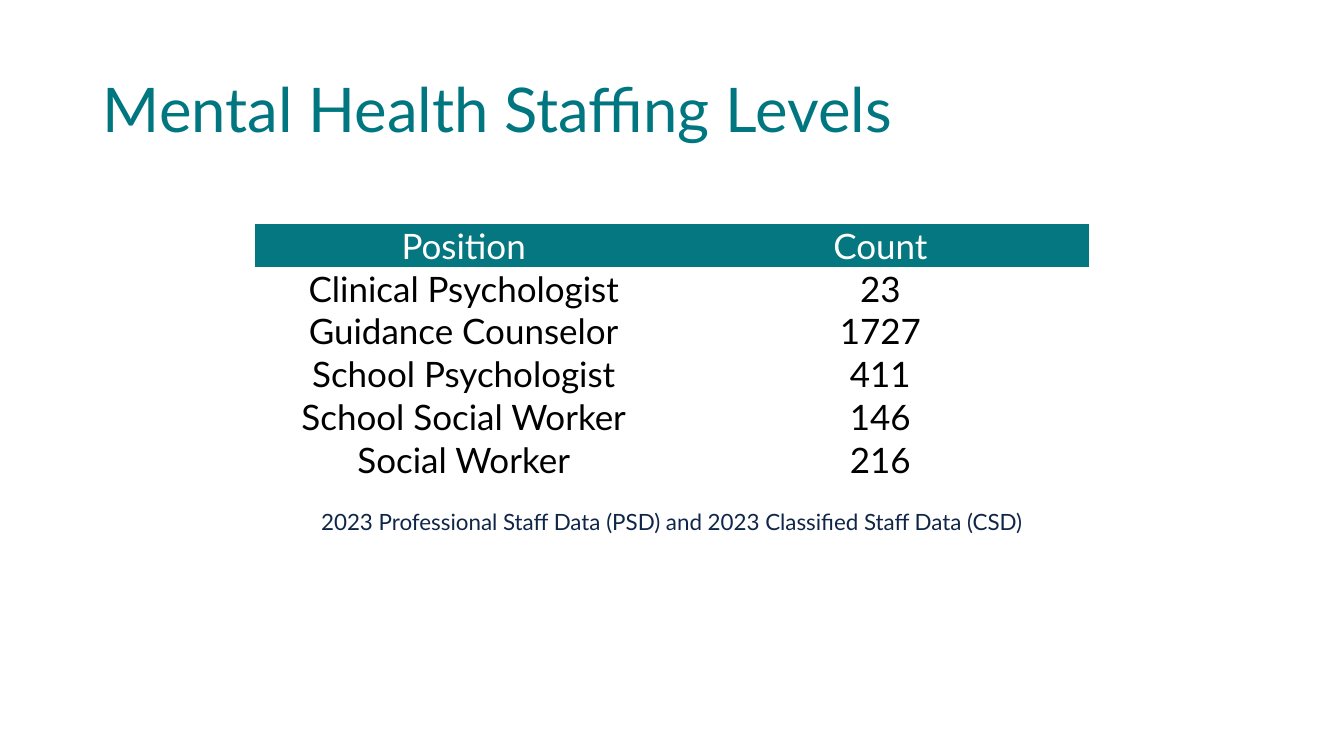
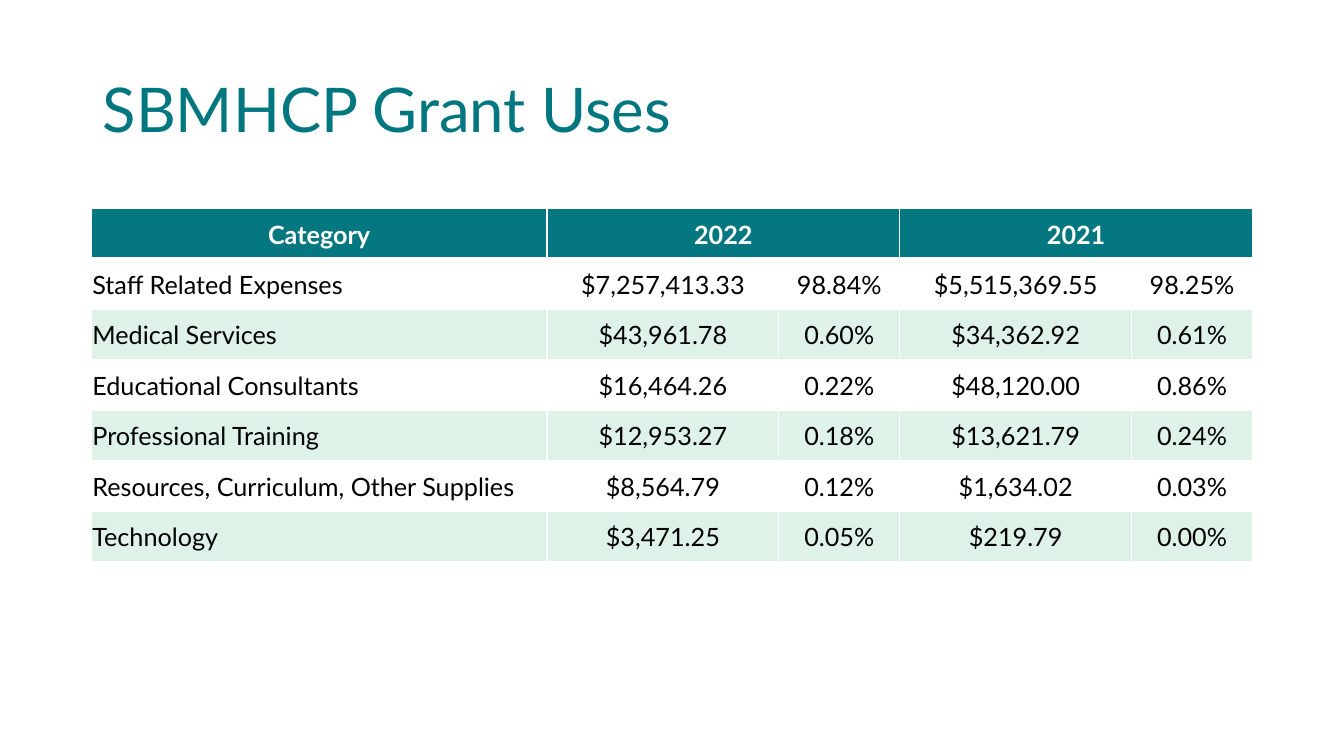
from lxml.etree import SubElement
from pptx import Presentation
from pptx.dml.color import RGBColor
from pptx.enum.text import MSO_ANCHOR as Anchor, PP_ALIGN as Align
from pptx.oxml.ns import qn
from pptx.util import Inches, Pt

SLIDE_WIDTH, SLIDE_HEIGHT = Inches(13.33), Inches(7.5)
FONT = "Lato"
COLORS = {
    "title": "007780",
    "header": "057780",
    "stripe": "DEF2E8",
    "note": "102649",
    "text": "000000",
    "white": "FFFFFF",
}
NO_GRID_STYLE = "{2D5ABB26-0587-4C30-8999-92F81FD0307C}"
TITLE_ONLY, TITLE_AND_BODY = 5, 1

STAFFING = [
    ["Position", "Count"],
    ["Clinical Psychologist", "23"],
    ["Guidance Counselor", "1727"],
    ["School Psychologist", "411"],
    ["School Social Worker", "146"],
    ["Social Worker", "216"],
]
GRANT_USES = [
    ["Category", "2022", "", "2021", ""],
    ["Staff Related Expenses", "$7,257,413.33", "98.84%", "$5,515,369.55", "98.25%"],
    ["Medical Services", "$43,961.78", "0.60%", "$34,362.92", "0.61%"],
    ["Educational Consultants", "$16,464.26", "0.22%", "$48,120.00", "0.86%"],
    ["Professional Training", "$12,953.27", "0.18%", "$13,621.79", "0.24%"],
    ["Resources, Curriculum, Other Supplies", "$8,564.79", "0.12%", "$1,634.02", "0.03%"],
    ["Technology", "$3,471.25", "0.05%", "$219.79", "0.00%"],
]


def centred_area(width, top, height):
    """Turn percentages of the slide into a horizontally centred box."""
    return (
        int(SLIDE_WIDTH * (100 - width) / 200),
        int(SLIDE_HEIGHT * top / 100),
        int(SLIDE_WIDTH * width / 100),
        int(SLIDE_HEIGHT * height / 100),
    )


def write(frame, text, size, color, align, bold=False):
    paragraph = frame.paragraphs[0]
    paragraph.alignment = align
    paragraph.space_before = Pt(0)
    run = paragraph.add_run()
    run.text = text
    run.font.name = FONT
    run.font.size = Pt(size)
    run.font.bold = bold
    run.font.color.rgb = RGBColor.from_string(COLORS[color])
    return paragraph


def place(shape, area):
    shape.left, shape.top, shape.width, shape.height = area


def add_titled_slide(deck, title, layout):
    slide = deck.slides.add_slide(deck.slide_layouts[layout])
    heading = slide.shapes.title
    place(heading, centred_area(86.2, 5.3, 19.3))
    heading.text_frame.vertical_anchor = Anchor.MIDDLE
    write(heading.text_frame, title, 44, "title", Align.LEFT).line_spacing = 0.9
    return slide


def add_source_note(slide, text):
    note = slide.placeholders[1]
    place(note, centred_area(86.2, 67, 7.9))
    properties = note.text_frame.paragraphs[0]._p.get_or_add_pPr()
    properties.set("marL", "0")
    properties.set("indent", "0")
    SubElement(properties, qn("a:buNone"))
    write(note.text_frame, text, 16, "note", Align.CENTER).line_spacing = 0.9


def add_borders(cell, bottom_width):
    properties = cell._tc.get_or_add_tcPr()
    for side, width in (("L", 1), ("R", 1), ("T", 1), ("B", bottom_width)):
        line = SubElement(properties, qn(f"a:ln{side}"), w=str(Pt(width)))
        fill = SubElement(line, qn("a:solidFill"))
        SubElement(fill, qn("a:srgbClr"), val=COLORS["white"])


def fill_cell(cell, color):
    if color:
        cell.fill.solid()
        cell.fill.fore_color.rgb = RGBColor.from_string(COLORS[color])
    else:
        cell.fill.background()


def add_data_table(slide, rows, area, shares, size, merges=(), ruled=False):
    """Add a table; a ruled one has borders, stripes, a bold header and left labels."""
    table = slide.shapes.add_table(len(rows), len(shares), *area).table
    table._tbl.tblPr.find(qn("a:tableStyleId")).text = NO_GRID_STYLE
    for column, share in zip(table.columns, shares):
        column.width = int(area[2] * share / sum(shares))
    for first, last in merges:
        table.cell(0, first).merge(table.cell(0, last))

    for r, row in enumerate(rows):
        header = r == 0
        striped = ruled and r % 2 == 0
        for c, text in enumerate(row):
            cell = table.cell(r, c)
            cell.vertical_anchor = Anchor.MIDDLE
            cell.margin_left = cell.margin_right = cell.margin_top = Inches(0.01)
            cell.margin_bottom = 0
            if ruled:
                add_borders(cell, 3 if header else 1)
            fill_cell(cell, "header" if header else "stripe" if striped else None)
            if text:
                label = ruled and c == 0 and not header
                write(cell.text_frame, text, size, "white" if header else "text",
                      Align.LEFT if label else Align.CENTER, bold=ruled and header)


def main():
    deck = Presentation()
    deck.slide_width, deck.slide_height = SLIDE_WIDTH, SLIDE_HEIGHT

    staffing = add_titled_slide(deck, "Mental Health Staffing Levels", TITLE_AND_BODY)
    add_source_note(
        staffing, "2023 Professional Staff Data (PSD) and 2023 Classified Staff Data (CSD)")
    add_data_table(staffing, STAFFING, centred_area(62, 29.6, 34), (1, 1), 25)

    grants = add_titled_slide(deck, "SBMHCP Grant Uses", TITLE_ONLY)
    add_data_table(grants, GRANT_USES, centred_area(86.4, 27.6, 46.7),
                   (4.52, 2.3, 1.2, 2.3, 1.2), 18, merges=((1, 2), (3, 4)), ruled=True)

    deck.save("out.pptx")


if __name__ == "__main__":
    main()
